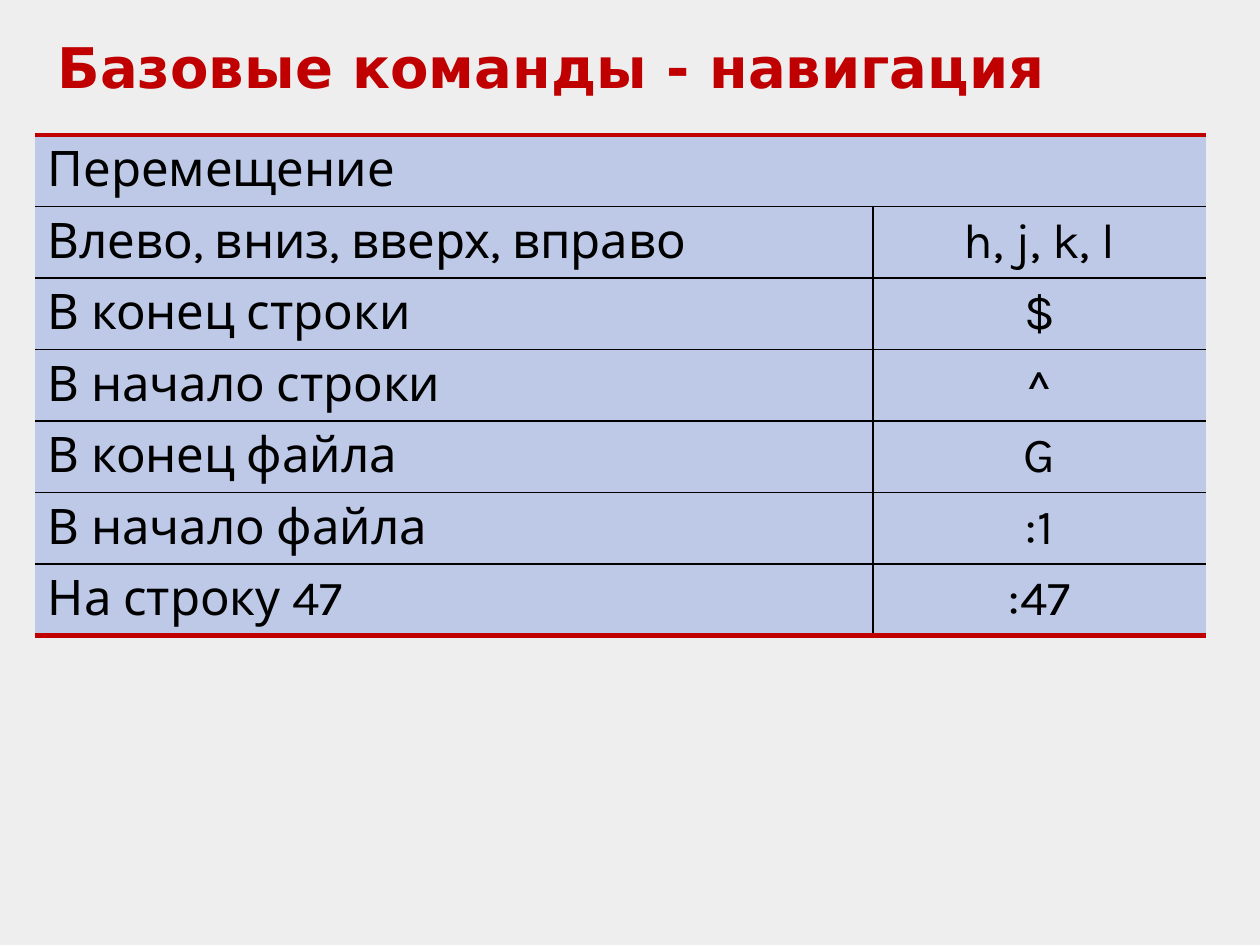
from typing import NamedTuple

from lxml.etree import SubElement
from pptx import Presentation
from pptx.dml.color import RGBColor
from pptx.enum.text import MSO_ANCHOR, PP_ALIGN
from pptx.oxml.ns import qn
from pptx.util import Cm, Pt

BACKGROUND, CELL, RED, BLACK = "EEEEEE", "BDC9E7", "C00000", "000000"


class Command(NamedTuple):
    action: str
    keys: str


class Border(NamedTuple):
    color: str
    width: float


HEADING = "Перемещение"
COMMANDS = [
    Command("Влево, вниз, вверх, вправо", "h, j, k, l"),
    Command("В конец строки", "$"),
    Command("В начало строки", "^"),
    Command("В конец файла", "G"),
    Command("В начало файла", ":1"),
    Command("На строку 47", ":47"),
]
THIN, THICK = Border(BLACK, 1), Border(RED, 3)


def rgb(color: str) -> RGBColor:
    return RGBColor.from_string(color)


def set_font(p, name: str, size: float, color: str, bold: bool = False) -> None:
    p.font.name = name
    p.font.size = Pt(size)
    p.font.bold = bold
    p.font.color.rgb = rgb(color)


def set_borders(cell, **borders: Border | None) -> None:
    """Draw the sides L, R, T and B, in that order; None hides a side."""
    tc_pr = cell._tc.get_or_add_tcPr()
    for side, border in borders.items():
        ln = SubElement(tc_pr, qn(f"a:ln{side}"))
        if border is None:
            SubElement(ln, qn("a:noFill"))
            continue
        ln.set("w", str(Pt(border.width)))
        fill = SubElement(ln, qn("a:solidFill"))
        SubElement(fill, qn("a:srgbClr")).set("val", border.color)


def add_title(slide, text: str) -> None:
    tf = slide.shapes.add_textbox(Cm(0.91), Cm(0.53), Cm(23.55), Cm(1.63)).text_frame
    tf.word_wrap = True
    p = tf.paragraphs[0]
    p.text = text
    set_font(p, "DejaVu Sans", 32, RED, bold=True)


def add_command_table(slide, heading: str, commands: list[Command]) -> None:
    rows = [Command(heading, ""), *commands]
    last = len(rows) - 1
    row_height = Cm(1.44)
    table = slide.shapes.add_table(
        len(rows), 2, Cm(0.71), Cm(2.72), Cm(23.6), row_height * len(rows)
    ).table
    table.first_row = table.horz_banding = False
    table.columns[0].width, table.columns[1].width = Cm(16.89), Cm(6.71)

    for i, row in enumerate(rows):
        table.rows[i].height = row_height
        inner = THIN if i else None
        for j, text in enumerate(row):
            cell = table.cell(i, j)
            set_borders(
                cell,
                L=inner if j else None,
                R=None if j else inner,
                T=THIN if i else THICK,
                B=THICK if i == last else THIN,
            )
            cell.fill.solid()
            cell.fill.fore_color.rgb = rgb(CELL)
            cell.vertical_anchor = MSO_ANCHOR.MIDDLE
            p = cell.text_frame.paragraphs[0]
            p.text = text
            p.alignment = PP_ALIGN.CENTER if j else PP_ALIGN.LEFT
            set_font(p, "Karla", 28, BLACK)
    table.cell(0, 0).merge(table.cell(0, 1))


def main() -> None:
    prs = Presentation()
    prs.slide_width, prs.slide_height = Cm(25.4), Cm(19.05)
    slide = prs.slides.add_slide(prs.slide_layouts[6])
    slide.background.fill.solid()
    slide.background.fill.fore_color.rgb = rgb(BACKGROUND)
    add_title(slide, "Базовые команды - навигация")
    add_command_table(slide, HEADING, COMMANDS)
    prs.save("out.pptx")


if __name__ == "__main__":
    main()
